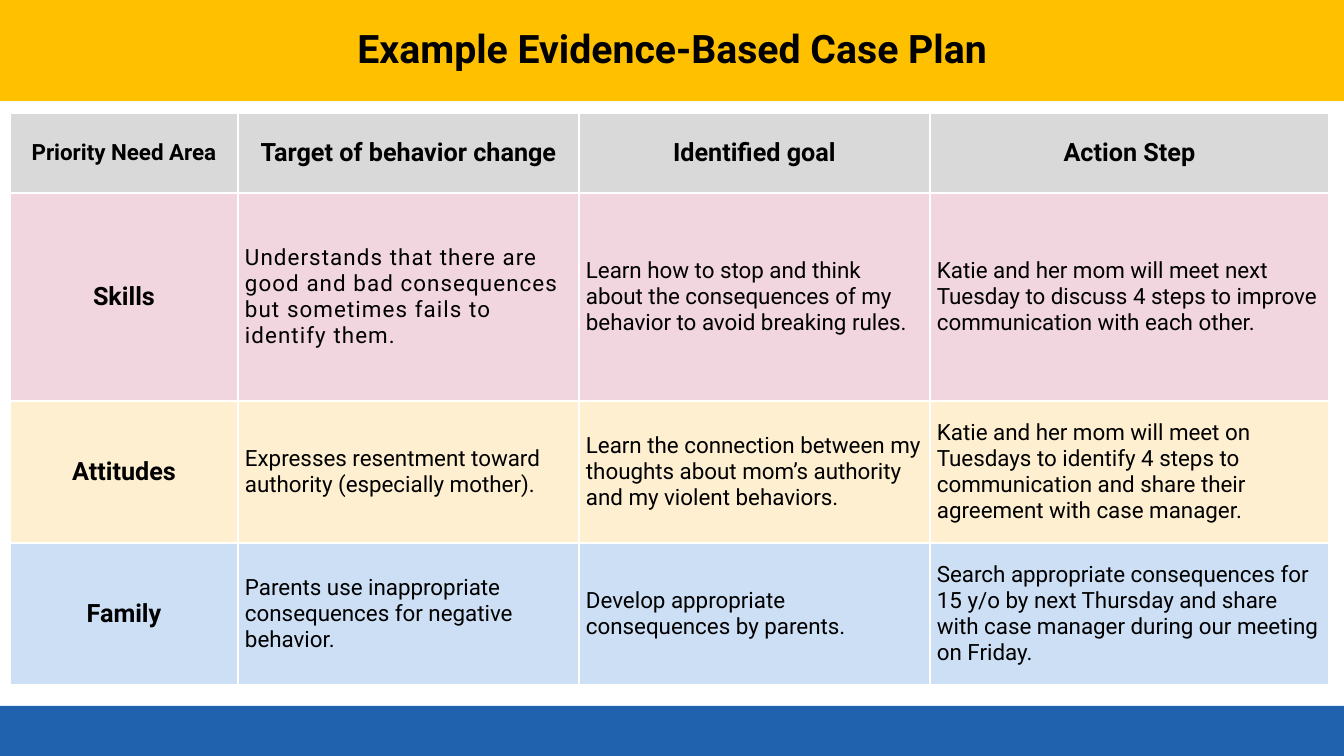
from lxml.etree import SubElement
from pptx import Presentation
from pptx.dml.color import RGBColor
from pptx.enum.shapes import MSO_SHAPE
from pptx.enum.text import MSO_ANCHOR, PP_ALIGN
from pptx.oxml.ns import qn
from pptx.util import Emu, Pt

COLORS = {
    "text": "000000",
    "title_band": "FFC000",
    "footer_band": "2162AE",
    "border": "FFFFFF",
    "header": "D9D9D9",
    "skills": "F1D5DF",
    "attitudes": "FEEFD1",
    "family": "CCDFF5",
}
FONT = "Roboto"
SLIDE_WIDTH, SLIDE_HEIGHT = 1344, 756
COLUMN_WIDTHS = [228, 341, 351, 399]
ROW_HEIGHTS = [80, 208, 142, 142]
ROWS = [
    ("header", ["Priority Need Area", "Target of behavior change", "Identified goal", "Action Step"]),
    ("skills", [
        "Skills",
        "Understands that there are good and bad consequences but sometimes fails to identify them.",
        "Learn how to stop and think about the consequences of my behavior to avoid breaking rules.",
        "Katie and her mom will meet next Tuesday to discuss 4 steps to improve communication with each other.",
    ]),
    ("attitudes", [
        "Attitudes",
        "Expresses resentment toward authority (especially mother).",
        "Learn the connection between my thoughts about mom’s authority and my violent behaviors.",
        "Katie and her mom will meet on Tuesdays to identify 4 steps to communication and share their agreement with case manager.",
    ]),
    ("family", [
        "Family",
        "Parents use inappropriate consequences for negative behavior.",
        "Develop appropriate consequences by parents.",
        "Search appropriate consequences for 15 y/o by next Thursday and share with case manager during our meeting on Friday.",
    ]),
]


def px(length):
    return Emu(round(length * 12192000 / SLIDE_WIDTH))


def style_paragraph(paragraph, size, bold, centered):
    paragraph.alignment = PP_ALIGN.CENTER if centered else PP_ALIGN.LEFT
    paragraph.font.name = FONT
    paragraph.font.size = Pt(size)
    paragraph.font.bold = bold
    paragraph.font.color.rgb = RGBColor.from_string(COLORS["text"])


presentation = Presentation()
presentation.slide_width = px(SLIDE_WIDTH)
presentation.slide_height = px(SLIDE_HEIGHT)
slide = presentation.slides.add_slide(presentation.slide_layouts[6])

bands = {}
for name, top, height in [("footer_band", 706, 50), ("title_band", 0, 101)]:
    band = slide.shapes.add_shape(MSO_SHAPE.RECTANGLE, 0, px(top), px(SLIDE_WIDTH), px(height))
    band.shadow.inherit = False
    band.fill.solid()
    band.fill.fore_color.rgb = RGBColor.from_string(COLORS[name])
    band.line.fill.background()
    bands[name] = band

title_frame = bands["title_band"].text_frame
title_frame.word_wrap = True
title_frame.vertical_anchor = MSO_ANCHOR.MIDDLE
title = title_frame.paragraphs[0]
title.text = "Example Evidence-Based Case Plan"
title.line_spacing = 0.9
style_paragraph(title, 28, True, True)

table = slide.shapes.add_table(
    len(ROWS), len(COLUMN_WIDTHS), px(10), px(113), px(sum(COLUMN_WIDTHS)), px(sum(ROW_HEIGHTS))
).table
table.horz_banding = False
for column, width in zip(table.columns, COLUMN_WIDTHS):
    column.width = px(width)
for row, height in zip(table.rows, ROW_HEIGHTS):
    row.height = px(height)

for row_index, (color, texts) in enumerate(ROWS):
    for column_index, text in enumerate(texts):
        cell = table.cell(row_index, column_index)
        cell.margin_left = cell.margin_right = px(7)
        cell.margin_top = cell.margin_bottom = 0
        cell.vertical_anchor = MSO_ANCHOR.MIDDLE

        properties = cell._tc.get_or_add_tcPr()
        for side in ("lnL", "lnR", "lnT", "lnB"):
            border = SubElement(properties, qn(f"a:{side}"), w=str(Pt(1)))
            border_fill = SubElement(border, qn("a:solidFill"))
            SubElement(border_fill, qn("a:srgbClr"), val=COLORS["border"])
        cell.fill.solid()
        cell.fill.fore_color.rgb = RGBColor.from_string(COLORS[color])

        heading = row_index == 0 or column_index == 0
        size = 18 if heading and (row_index, column_index) != (0, 0) else 16
        paragraph = cell.text_frame.paragraphs[0]
        paragraph.text = text
        style_paragraph(paragraph, size, heading, heading)

skills_target = table.cell(1, 1).text_frame.paragraphs[0].runs[0]
skills_target.font._element.set("spc", "80")

presentation.save("out.pptx")
